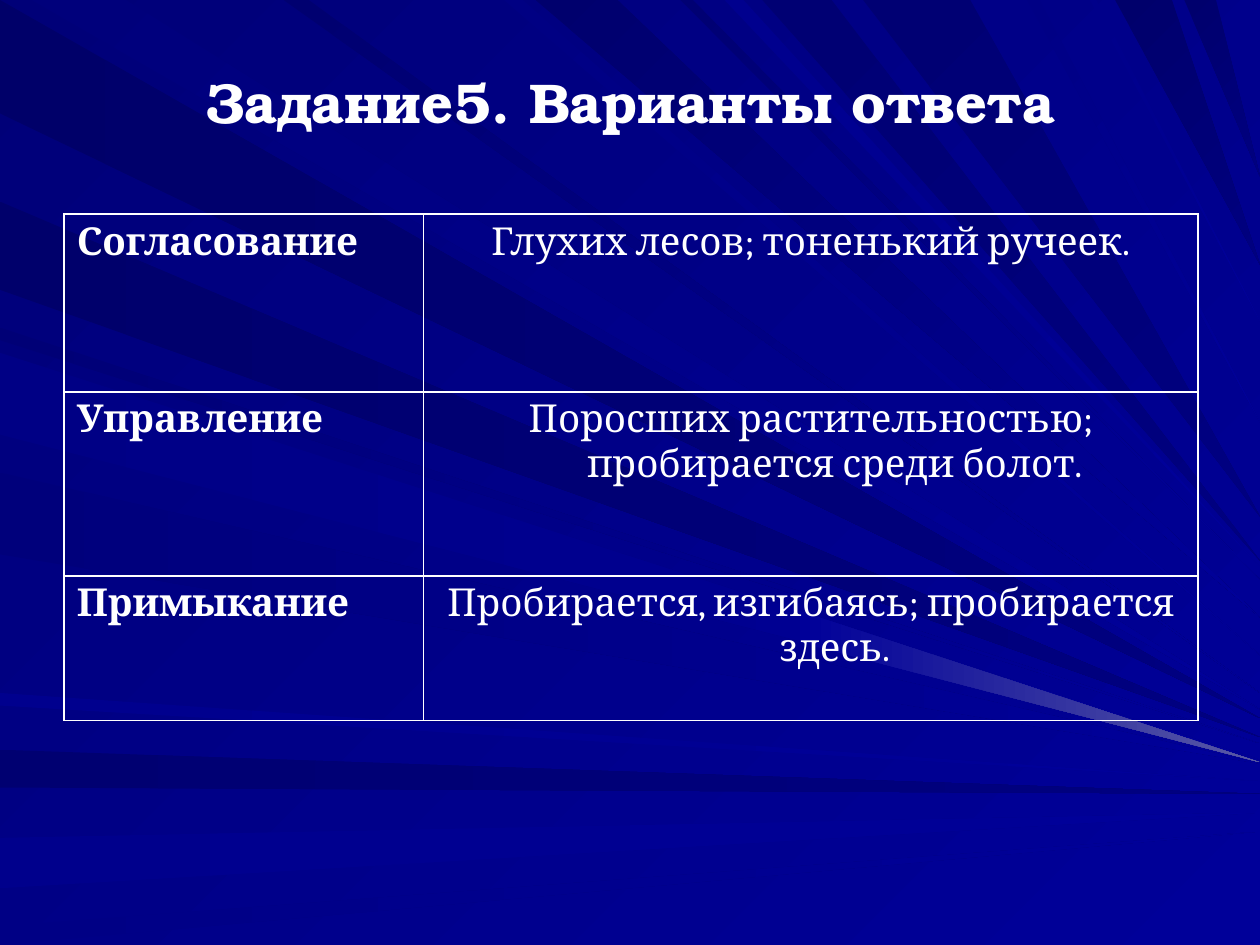
from dataclasses import dataclass
from typing import NamedTuple

from lxml import etree
from pptx import Presentation
from pptx.dml.color import RGBColor
from pptx.enum.text import MSO_ANCHOR, PP_ALIGN
from pptx.oxml.ns import qn
from pptx.util import Inches, Pt

LEFT, CENTER = PP_ALIGN.LEFT, PP_ALIGN.CENTER
MIDDLE = MSO_ANCHOR.MIDDLE


@dataclass(frozen=True)
class Theme:
    text: str = "FFFFFF"
    border: str = "FFFFFF"
    border_pt: float = 1
    night: str = "000078"
    navy: str = "000080"
    blue: str = "000099"
    glint: str = "5A5AA6"
    title_font: str = "TeX Gyre Bonum"
    title_pt: int = 32
    body_font: str = "Cambria"
    body_pt: int = 22


class Ray(NamedTuple):
    """Wedge from a span of the left or top edge to a tip on the right edge."""
    near: float
    far: float
    tip: float
    start: str
    end: str


class Answer(NamedTuple):
    link: str
    examples: str
    height: float


THEME = Theme()
WIDTH, HEIGHT = 10, 7.5

LEFT_RAYS = [
    Ray(0, 0.9, 5.7, "000069", THEME.navy),
    Ray(1.6, 2.3, 5.85, "00006B", THEME.navy),
    Ray(2.6, 2.7, 5.9, "000076", THEME.blue),
    Ray(2.8, 3.45, 6.03, "000085", THEME.blue),
    Ray(3.75, 4.4, 6.06, "00007B", THEME.blue),
    Ray(5.5, 5.6, 6.2, "00008E", THEME.blue),
    Ray(5.95, 6.25, 6.3, "000071", THEME.navy),
    Ray(6.65, 7.05, 6.45, "00008C", THEME.blue),
    Ray(7.35, 7.5, 6.6, "000085", THEME.blue),
]
TOP_RAYS = [
    Ray(0.25, 1, 5.63, "00007B", THEME.blue),
    Ray(2.25, 2.45, 5.5, "000070", THEME.blue),
    Ray(4, 4.15, 5.2, "000083", THEME.blue),
    Ray(4.25, 4.9, 4.9, "00006D", THEME.blue),
    Ray(5.4, 5.5, 4.6, "000073", THEME.blue),
    Ray(5.75, 5.9, 4.5, "00008E", THEME.blue),
    Ray(6.05, 6.6, 4.45, "000073", THEME.navy),
    Ray(6.85, 7.7, 4.1, "000073", THEME.navy),
    Ray(8.15, 8.25, 3.35, "000085", THEME.blue),
    Ray(8.65, 8.7, 2.55, "00008A", THEME.blue),
    Ray(8.85, 9.3, 2.1, "00006B", THEME.navy),
    Ray(9.4, 9.65, 1.4, "00006D", THEME.navy),
]
GLINT = [(6.35, 4.85), (6.35, 5.1), (WIDTH, 6.05)]

ANSWERS = [
    Answer("Согласование", "Глухих лесов; тоненький ручеек.", 1.41),
    Answer("Управление", "Поросших растительностью; пробирается среди болот.", 1.46),
    Answer("Примыкание", "Пробирается, изгибаясь; пробирается здесь.", 1.15),
]
COLUMN_WIDTHS = (2.85, 6.15)


def set_gradient(fill, start: str, end: str, angle: int) -> None:
    fill.gradient()
    fill.gradient_angle = -angle % 360  # clockwise angle to counter-clockwise
    for stop, color, position in zip(fill.gradient_stops, (start, end), (0, 1)):
        stop.color.rgb = RGBColor.from_string(color)
        stop.position = position


def draw_wedge(s, points: list, start: str, end: str, angle: int) -> None:
    (x, y), *rest = [(Inches(px), Inches(py)) for px, py in points]
    builder = s.shapes.build_freeform(x, y)
    builder.add_line_segments(rest, close=True)
    sp = builder.convert_to_shape()
    sp.shadow.inherit = False
    sp.line.fill.background()
    set_gradient(sp.fill, start, end, angle)


def draw_rays(s) -> None:
    for ray in LEFT_RAYS:
        points = [(0, ray.near), (0, ray.far), (WIDTH, ray.tip)]
        draw_wedge(s, points, ray.start, ray.end, 0)
    for ray in TOP_RAYS:
        points = [(ray.near, 0), (ray.far, 0), (WIDTH, ray.tip)]
        draw_wedge(s, points, ray.start, ray.end, 45)
    draw_wedge(s, GLINT, THEME.blue, THEME.glint, 0)


def set_font(p, name: str, size: int, bold: bool) -> None:
    p.font.name = name
    p.font.size = Pt(size)
    p.font.bold = bold
    p.font.color.rgb = RGBColor.from_string(THEME.text)


def draw_title(s, text: str) -> None:
    tf = s.shapes.add_textbox(Inches(0.51), Inches(0.5), Inches(9), Inches(0.6)).text_frame
    tf.word_wrap = True
    tf.vertical_anchor = MIDDLE
    p = tf.paragraphs[0]
    p.text = text
    p.alignment = CENTER
    set_font(p, THEME.title_font, THEME.title_pt, True)


def set_borders(cell) -> None:
    tc_pr = cell._tc.get_or_add_tcPr()
    for i, side in enumerate(("lnL", "lnR", "lnT", "lnB")):
        ln = etree.Element(qn(f"a:{side}"), w=str(Pt(THEME.border_pt)))
        fill = etree.SubElement(ln, qn("a:solidFill"))
        etree.SubElement(fill, qn("a:srgbClr"), val=THEME.border)
        tc_pr.insert(i, ln)


def fill_cell(cell, text: str, align: PP_ALIGN, bold: bool) -> None:
    cell.fill.background()
    set_borders(cell)
    p = cell.text_frame.paragraphs[0]
    p.text = text
    p.alignment = align
    p_pr = p._p.get_or_add_pPr()
    p_pr.set("marL", str(Inches(0.38)))
    p_pr.set("indent", str(Inches(-0.38)))
    set_font(p, THEME.body_font, THEME.body_pt, bold)


def draw_answers(s, answers: list[Answer]) -> None:
    height = sum(a.height for a in answers)
    table = s.shapes.add_table(len(answers), len(COLUMN_WIDTHS), Inches(0.51), Inches(1.7),
                               Inches(sum(COLUMN_WIDTHS)), Inches(height)).table
    table.first_row = table.horz_banding = False
    for column, width in zip(table.columns, COLUMN_WIDTHS):
        column.width = Inches(width)
    for i, answer in enumerate(answers):
        table.rows[i].height = Inches(answer.height)
        fill_cell(table.cell(i, 0), answer.link, LEFT, True)
        fill_cell(table.cell(i, 1), answer.examples, CENTER, False)


def main() -> None:
    prs = Presentation()
    prs.slide_width, prs.slide_height = Inches(WIDTH), Inches(HEIGHT)
    s = prs.slides.add_slide(prs.slide_layouts[6])

    # Background with light rays
    set_gradient(s.background.fill, THEME.night, THEME.blue, 45)
    draw_rays(s)

    # Content
    draw_title(s, "Задание5. Варианты ответа")
    draw_answers(s, ANSWERS)
    prs.save("out.pptx")


if __name__ == "__main__":
    main()
